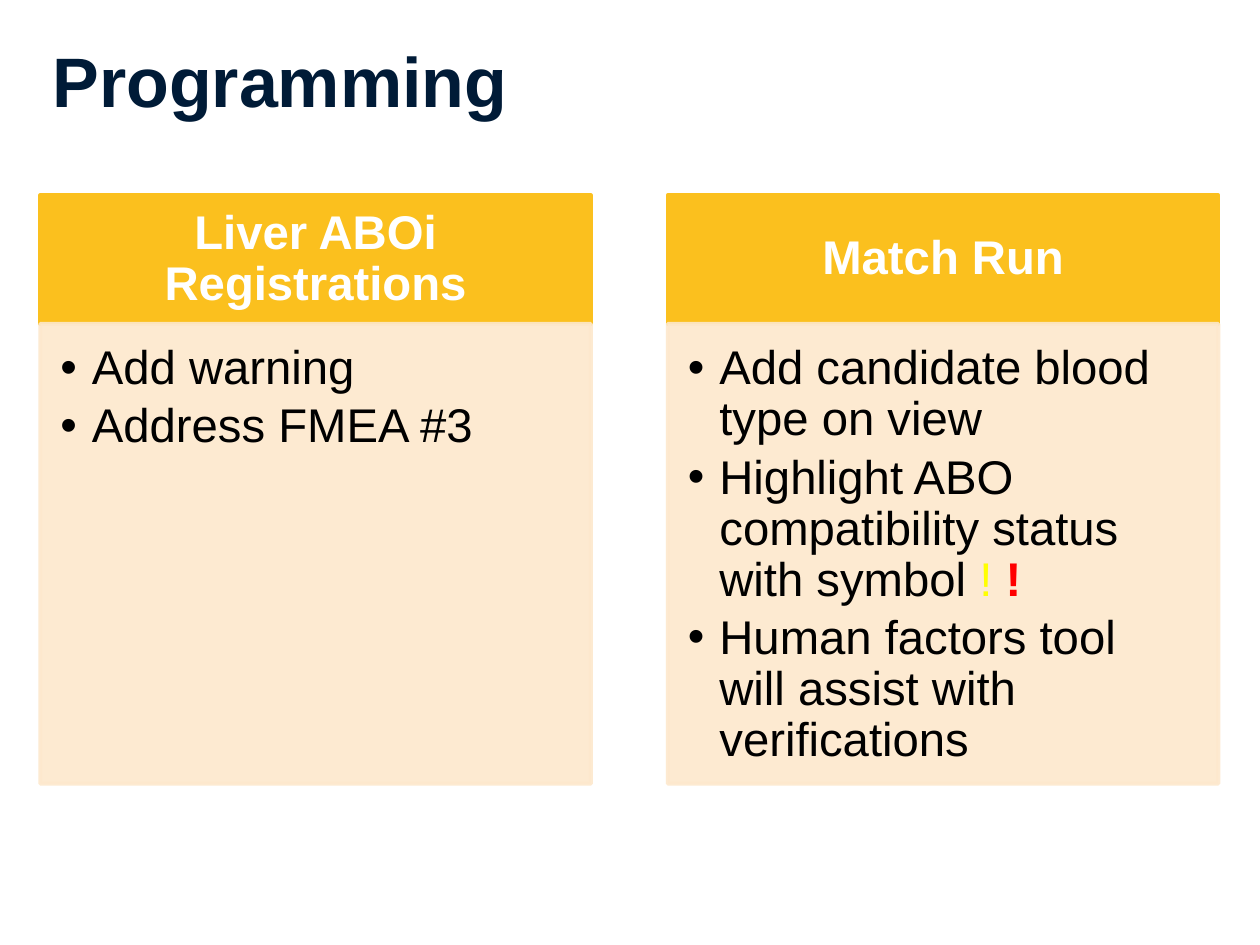
"""Build the Programming slide: two headed panels of bullet points."""
import pptx
import pptx.dml.color
import pptx.enum.shapes
import pptx.enum.text
import pptx.oxml
import pptx.oxml.ns
import pptx.util

Inches = pptx.util.Inches
Pt = pptx.util.Pt
RGBColor = pptx.dml.color.RGBColor
Align = pptx.enum.text.PP_ALIGN
Anchor = pptx.enum.text.MSO_ANCHOR

NAVY = RGBColor(0x00, 0x1B, 0x37)
GOLD = RGBColor(0xFB, 0xC0, 0x1E)
CREAM = RGBColor(0xFD, 0xE8, 0xCD)
WHITE = RGBColor(0xFF, 0xFF, 0xFF)
BLACK = RGBColor(0x00, 0x00, 0x00)
YELLOW = RGBColor(0xFF, 0xFF, 0x00)
RED = RGBColor(0xFF, 0x00, 0x00)

FONT = "Arial"
SIZE = 27
LEFT, TOP = 0.32, 1.55
WIDTH, STEP = 4.37, 4.98
HEAD, BODY = 1.02, 3.65

PANELS = [
    ("Liver ABOi Registrations", [
        [("Add warning", BLACK, False)],
        [("Address FMEA #3", BLACK, False)],
    ]),
    ("Match Run", [
        [("Add candidate blood type on view", BLACK, False)],
        [("Highlight ABO compatibility status with symbol ", BLACK, False),
         ("! ", YELLOW, False), ("!", RED, True)],
        [("Human factors tool will assist with verifications", BLACK, False)],
    ]),
]


def style(run, size, color, bold):
    """Set the font of a run."""
    run.font.name = FONT
    run.font.size = Pt(size)
    run.font.color.rgb = color
    run.font.bold = bold


def set_frame(frame, anchor, insets):
    """Wrap a text frame and set its anchor and insets."""
    frame.word_wrap = True
    frame.vertical_anchor = anchor
    (frame.margin_left, frame.margin_top,
     frame.margin_right, frame.margin_bottom) = map(Inches, insets)


def add_box(slide, left, top, height, color):
    """Add a filled and outlined rectangle of panel width."""
    box = slide.shapes.add_shape(
        pptx.enum.shapes.MSO_SHAPE.RECTANGLE,
        Inches(left), Inches(top), Inches(WIDTH), Inches(height))
    box.shadow.inherit = False
    box.fill.solid()
    box.fill.fore_color.rgb = color
    box.line.color.rgb = color
    box.line.width = Pt(2.25)
    return box


def fade(shape, percent):
    """Set the opacity of the fill and line of a shape."""
    props = shape.element.spPr
    for color in props.iter(pptx.oxml.ns.qn("a:srgbClr")):
        alpha = pptx.oxml.parse_xml(
            f'<a:alpha {pptx.oxml.ns.nsdecls("a")} val="{percent * 1000}"/>')
        color.append(alpha)


def add_bullet(para):
    """Give a paragraph a round bullet and a hanging indent."""
    props = para._p.get_or_add_pPr()
    props.set("marL", str(Inches(0.25)))
    props.set("indent", str(Inches(-0.25)))
    names = pptx.oxml.ns.nsdecls("a")
    props.append(pptx.oxml.parse_xml(f'<a:buFont {names} typeface="{FONT}"/>'))
    props.append(pptx.oxml.parse_xml(f'<a:buChar {names} char="•"/>'))


def add_title(slide, text):
    """Add the slide title."""
    box = slide.shapes.add_textbox(
        Inches(LEFT), Inches(0.17), Inches(9.56), Inches(0.93))
    frame = box.text_frame
    set_frame(frame, Anchor.MIDDLE, (0.1, 0.05, 0.1, 0.05))
    frame.text = text
    style(frame.paragraphs[0].runs[0], 40, NAVY, True)


def add_head(slide, left, text):
    """Add the heading box of a panel."""
    frame = add_box(slide, left, TOP, HEAD, GOLD).text_frame
    set_frame(frame, Anchor.MIDDLE, (0.21, 0.12, 0.21, 0.12))
    frame.text = text
    para = frame.paragraphs[0]
    para.alignment = Align.CENTER
    para.line_spacing = 0.9
    style(para.runs[0], SIZE, WHITE, True)


def add_body(slide, left, items):
    """Add the bullet box of a panel."""
    box = add_box(slide, left, TOP + HEAD, BODY, CREAM)
    fade(box, 90)
    frame = box.text_frame
    set_frame(frame, Anchor.TOP, (0.16, 0.16, 0.21, 0.24))
    for index, parts in enumerate(items):
        para = frame.add_paragraph() if index else frame.paragraphs[0]
        add_bullet(para)
        para.alignment = Align.LEFT
        para.line_spacing = 0.9
        para.space_after = Pt(4)
        for text, color, bold in parts:
            run = para.add_run()
            run.text = text
            style(run, SIZE, color, bold)


def main():
    """Build and save the slide."""
    deck = pptx.Presentation()
    deck.slide_width = Inches(10)
    deck.slide_height = Inches(7.5)
    slide = deck.slides.add_slide(deck.slide_layouts[6])
    for index, (head, items) in enumerate(PANELS):
        left = LEFT + index * STEP
        add_head(slide, left, head)
        add_body(slide, left, items)
    add_title(slide, "Programming")
    deck.save("out.pptx")


if __name__ == "__main__":
    main()
